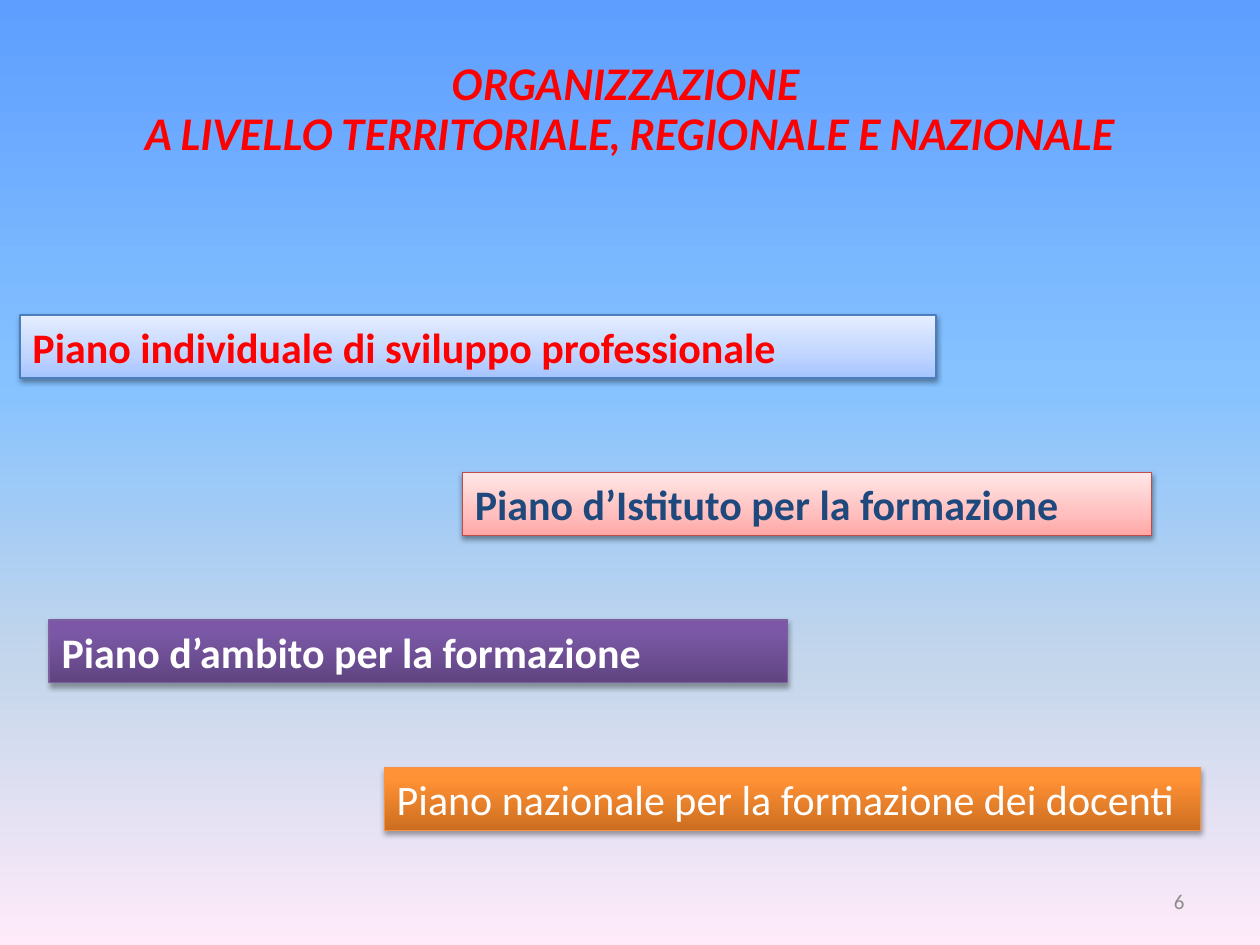
from pptx import Presentation
from pptx.dml.color import RGBColor
from pptx.enum.shapes import MSO_SHAPE
from pptx.enum.text import MSO_ANCHOR, PP_ALIGN
from pptx.oxml.ns import qn
from pptx.util import Inches, Pt
from lxml.etree import SubElement

HEX = {
    "red": "FF0000", "navy": "1F497D", "white": "FFFFFF", "gray": "8C8C8C",
    "black": "000000",
    "blue line": "4B7EBC", "pink line": "BF4C48",
    "plum line": "7D60A0", "gold line": "F69240",
}

# Gradient stops, from top to bottom
SKY = [(0, "5E9EFF"), (40, "85C2FF"), (70, "C4D6EB"), (100, "FFEBFA")]
BLUE = [(0, "E6EEFF"), (65, "BFD4FF"), (100, "A4C4FF")]
PINK = [(0, "FFE7E7"), (65, "FFC0BF"), (100, "FFA6A5")]
PLUM = [(0, "7C57A8"), (20, "7B58A6"), (100, "5F4480")]
GOLD = [(0, "FF9136"), (20, "FF9034"), (100, "CC6E20")]

# Text, left, top, width, stops, line, text colour, bold, shadow (alpha, distance)
SOFT, DEEP = (38, 1.6), (35, 1.8)
PLANS = [
    ("Piano individuale di sviluppo professionale",
     0.16, 2.5, 7.27, BLUE, "blue line", "red", True, SOFT),
    ("Piano d’Istituto per la formazione",
     3.67, 3.75, 5.47, PINK, "pink line", "navy", True, SOFT),
    ("Piano d’ambito per la formazione",
     0.39, 4.92, 5.86, PLUM, "plum line", "white", True, DEEP),
    ("Piano nazionale per la formazione dei docenti",
     3.05, 6.09, 6.48, GOLD, "gold line", "white", False, DEEP),
]


def color(name):
    return RGBColor.from_string(HEX[name])


def shade(fill, root, stops):
    """Fill with a gradient that runs straight down."""
    fill.gradient()
    fill.gradient_angle = 270
    group = next(root.iter(qn("a:gsLst")))
    group.clear()
    for pos, tone in stops:
        stop = SubElement(group, qn("a:gs"), pos=str(pos * 1000))
        SubElement(stop, qn("a:srgbClr"), val=tone)


def shadow(shape, alpha, dist):
    """Cast a soft shadow straight down."""
    shape.shadow.inherit = False
    group = shape._element.spPr.find(qn("a:effectLst"))
    cast = SubElement(group, qn("a:outerShdw"), blurRad=str(Pt(3.1)),
                      dist=str(Pt(dist)), dir="5400000", rotWithShape="0")
    tone = SubElement(cast, qn("a:srgbClr"), val=HEX["black"])
    SubElement(tone, qn("a:alpha"), val=str(alpha * 1000))


def write(shape, lines, size, tone, align, anchor, face="Calibri",
          bold=False, italic=False):
    frame = shape.text_frame
    frame.word_wrap = True
    frame.vertical_anchor = anchor
    frame.text = "\n".join(lines)
    for para in frame.paragraphs:
        para.alignment = align
        font = para.font
        font.name, font.size = face, Pt(size)
        font.bold, font.italic = bold, italic
        font.color.rgb = color(tone)


def label(slide, left, top, width, height, *text, **style):
    box = slide.shapes.add_textbox(
        Inches(left), Inches(top), Inches(width), Inches(height))
    write(box, *text, **style)


def plan(slide, text, left, top, width, stops, line, tone, bold, cast):
    box = slide.shapes.add_shape(
        MSO_SHAPE.RECTANGLE, Inches(left), Inches(top), Inches(width), Inches(0.5))
    shade(box.fill, box._element, stops)
    box.line.color.rgb = color(line)
    box.line.width = Pt(0.75)
    shadow(box, *cast)
    write(box, [text], 24, tone, PP_ALIGN.LEFT, MSO_ANCHOR.TOP, bold=bold)


def main():
    deck = Presentation()
    deck.slide_width, deck.slide_height = Inches(10), Inches(7.5)
    slide = deck.slides.add_slide(deck.slide_layouts[6])

    # Background
    shade(slide.background.fill, slide._element, SKY)

    # Page number
    label(slide, 7.17, 6.95, 2.33, 0.4, ["6"], 12, "gray",
          PP_ALIGN.RIGHT, MSO_ANCHOR.MIDDLE)

    # Plans
    for item in PLANS:
        plan(slide, *item)

    # Title
    label(slide, 0, 0, 10, 1.31,
          ["ORGANIZZAZIONE ", "A LIVELLO TERRITORIALE, REGIONALE E NAZIONALE"],
          24, "red", PP_ALIGN.CENTER, MSO_ANCHOR.BOTTOM,
          face="Lato", bold=True, italic=True)

    deck.save("out.pptx")


if __name__ == "__main__":
    main()
